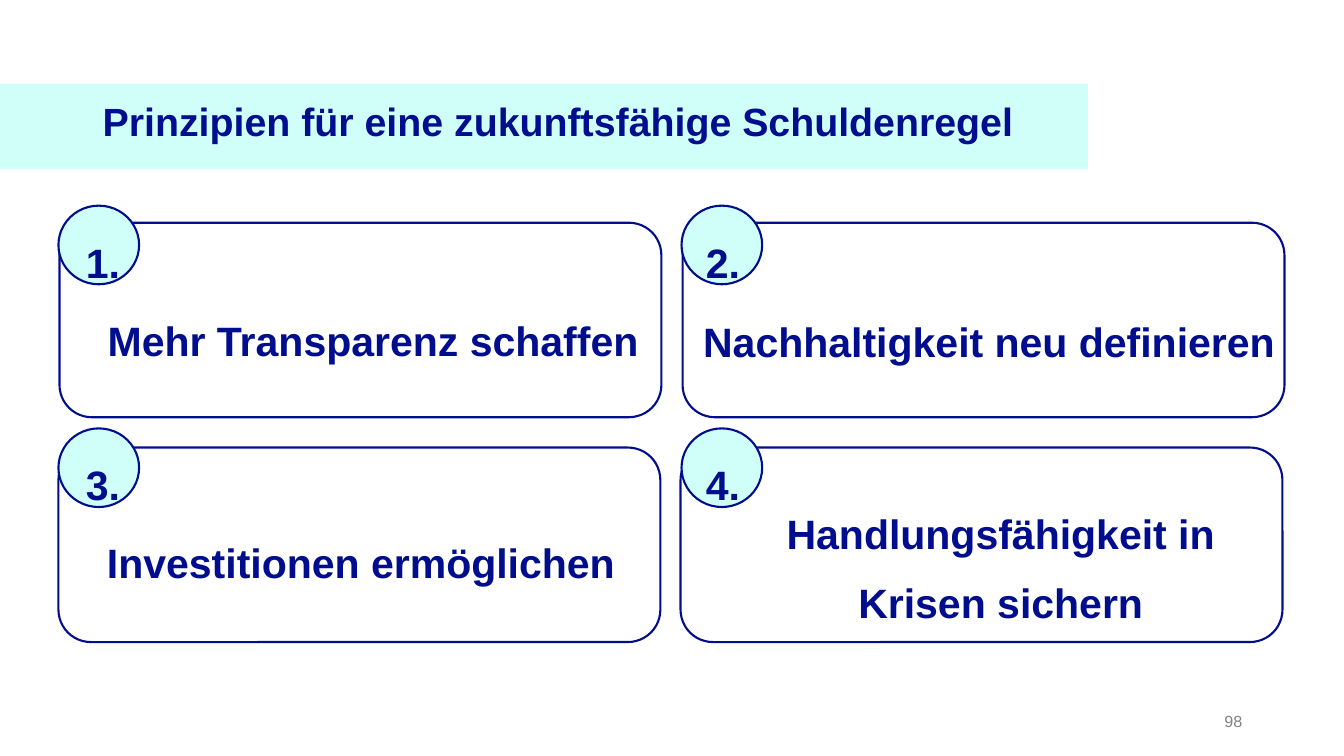
from pptx import Presentation
from pptx.dml.color import RGBColor
from pptx.enum.shapes import MSO_SHAPE
from pptx.enum.text import MSO_ANCHOR, MSO_AUTO_SIZE, PP_ALIGN
from pptx.util import Pt

PX = 9144  # 100 px to the inch
NAVY = RGBColor(0x00, 0x0E, 0x8E)
AQUA = RGBColor(0xD0, 0xFF, 0xF9)
BANNER_AQUA = RGBColor(0xD0, 0xFF, 0xFA)
GREY = RGBColor(0x82, 0x82, 0x82)
RECT, ROUNDED, OVAL = MSO_SHAPE.RECTANGLE, MSO_SHAPE.ROUNDED_RECTANGLE, MSO_SHAPE.OVAL
LEFT, CENTER, RIGHT = PP_ALIGN.LEFT, PP_ALIGN.CENTER, PP_ALIGN.RIGHT
TOP, MIDDLE = MSO_ANCHOR.TOP, MSO_ANCHOR.MIDDLE
GROW, FIXED = MSO_AUTO_SIZE.SHAPE_TO_FIT_TEXT, MSO_AUTO_SIZE.NONE

prs = Presentation()
prs.slide_width, prs.slide_height = 1333 * PX, 750 * PX
slide = prs.slides.add_slide(prs.slide_layouts[6])


def add_panel(kind, box, fill=None, line=None):
    panel = slide.shapes.add_shape(kind, *(v * PX for v in box))
    panel.shadow.inherit = False
    if fill is None:
        panel.fill.background()
    else:
        panel.fill.solid()
        panel.fill.fore_color.rgb = fill
    if line is None:
        panel.line.fill.background()
    else:
        panel.line.color.rgb = line
        panel.line.width = Pt(1.5)


def add_label(text, box, size=29.3, color=NAVY, bold=True, align=CENTER,
              anchor=TOP, autosize=GROW, inset=(0, 0), indent=35, spacing=1.4):
    frame = slide.shapes.add_textbox(*(v * PX for v in box)).text_frame
    frame.word_wrap = True
    frame.auto_size = autosize
    frame.vertical_anchor = anchor
    frame.margin_left = frame.margin_right = inset[0] * PX
    frame.margin_top = frame.margin_bottom = inset[1] * PX
    paragraph = frame.paragraphs[0]
    paragraph.alignment = align
    paragraph.line_spacing = spacing
    paragraph._p.get_or_add_pPr().set("marL", str(indent * PX))
    run = paragraph.add_run()
    run.text = text
    run.font.name = "Arial"
    run.font.size = Pt(size)
    run.font.bold = bold
    run.font.color.rgb = color


# Title banner
add_panel(RECT, (0, 83, 1079, 85), fill=BANNER_AQUA)
add_label("Prinzipien für eine zukunftsfähige Schuldenregel", (92, 83, 1255, 85),
          size=28.1, align=LEFT, anchor=MIDDLE, autosize=FIXED,
          inset=(10, 5), indent=0, spacing=0.7)

# Principles: wording, its box, and the corner of its card
principles = [
    ("Mehr Transparenz schaffen", (70, 293, 565, 52), (59, 221)),
    ("Nachhaltigkeit neu definieren", (655, 294, 617, 54), (677, 221)),
    ("Investitionen ermöglichen", (24, 514, 633, 52), (58, 444)),
    ("Handlungsfähigkeit in Krisen sichern", (677, 485, 596, 112), (675, 444)),
]
for index, (principle, wording_box, card_corner) in enumerate(principles):
    row, column = divmod(index, 2)
    add_panel(ROUNDED, (*card_corner, 597, 193), line=NAVY)
    add_label(principle, wording_box)
    add_panel(OVAL, (58 + 618 * column, 204 + 221 * row, 80, 78), fill=AQUA, line=NAVY)
    add_label(f"{index + 1}.", (-3 + 615 * column, 216 + 220 * row, 175, 54))

# Page number
add_label("98", (942, 695, 300, 40), size=11.5, color=GREY, bold=False, align=RIGHT,
          anchor=MIDDLE, autosize=FIXED, inset=(10, 5), indent=0, spacing=1.0)

prs.save("out.pptx")
